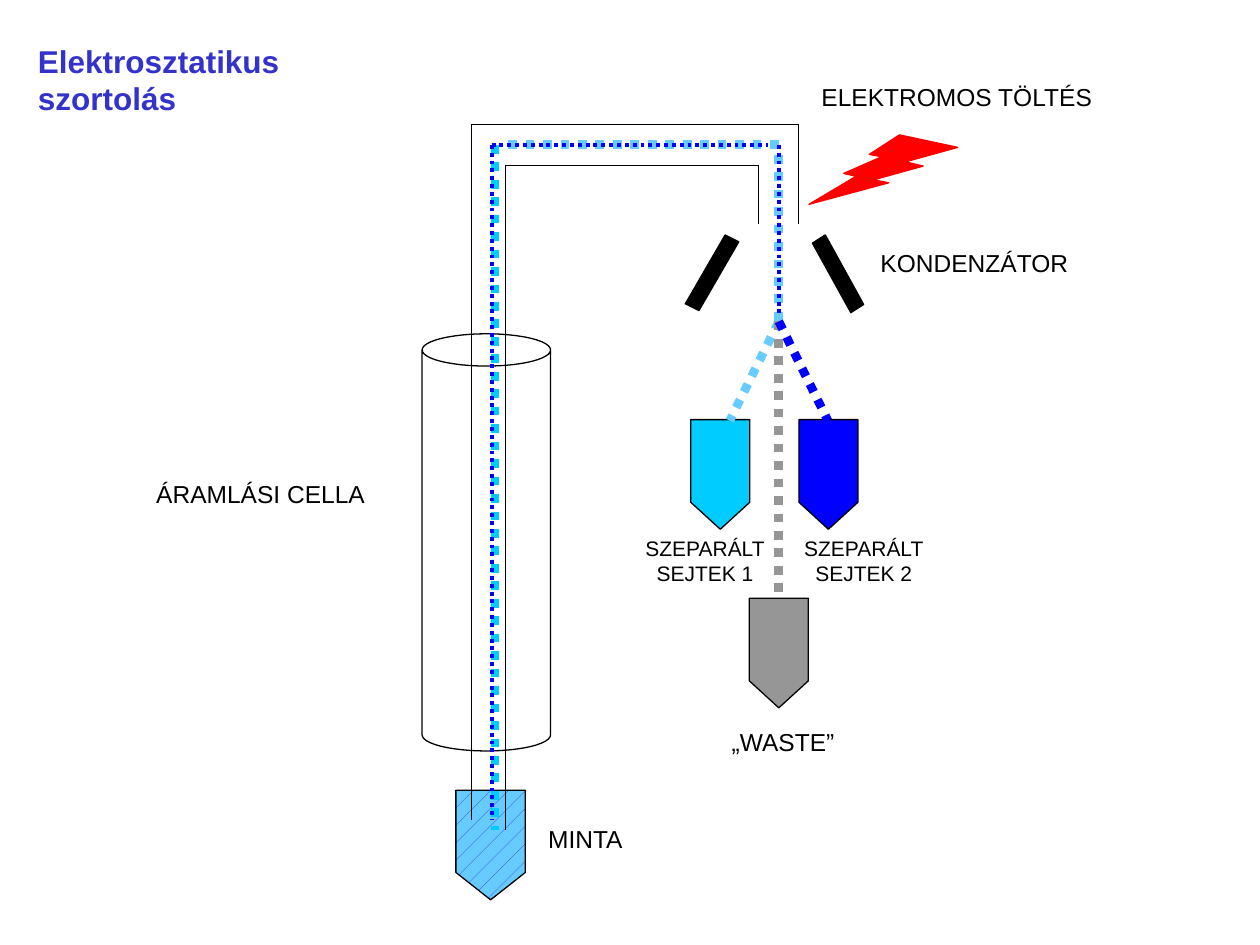
from typing import NamedTuple

from lxml.etree import SubElement
from pptx import Presentation
from pptx.dml.color import RGBColor
from pptx.enum.dml import MSO_LINE as Dash, MSO_PATTERN as Pattern
from pptx.enum.shapes import MSO_CONNECTOR as Connector, MSO_SHAPE as Preset
from pptx.enum.text import MSO_ANCHOR as Anchor, MSO_AUTO_SIZE as AutoSize, PP_ALIGN as Align
from pptx.oxml.ns import qn
from pptx.util import Cm, Pt

BLACK, GREY, RED = "000000", "969696", "FF0000"
INDIGO, BLUE, CYAN, SKY = "3333CC", "0000FF", "00CCFF", "66CCFF"

# Positions in centimetres
STREAM_X, STREAM_Y, SPLIT_Y = 15.7, 2.92, 6.48
TUBE_LEFT, TUBE_RIGHT, TUBE_TOP = 9.5, 16.1, 2.51
BORE_LEFT, BORE_RIGHT, BORE_TOP = 10.19, 15.29, 3.33
NOZZLE_Y, TUBE_END, BORE_END = 4.52, 16.54, 16.74


class Vessel(NamedTuple):
    center: float
    top: float
    color: str
    width: float = 1.19
    point: float = 0.457


class Segment(NamedTuple):
    x1: float
    y1: float
    x2: float
    y2: float
    color: str = BLACK
    weight: float = 0.75


class Plate(NamedTuple):
    left: float
    top: float
    rotation: float


class Label(NamedTuple):
    text: str
    left: float
    top: float
    width: float
    height: float = 0.84
    size: float = 14
    align: Align = Align.LEFT


SAMPLE = Vessel(9.89, 15.93, SKY, 1.4, 0.394)
COLLECTORS = [
    Vessel(14.52, 8.46, CYAN),
    Vessel(STREAM_X, 12.06, GREY),
    Vessel(16.7, 8.46, BLUE),
]
SEGMENTS = [
    # Wide cell streams
    Segment(9.98, STREAM_Y, 9.98, BORE_END, CYAN, 5),
    Segment(STREAM_X, STREAM_Y, BORE_LEFT, STREAM_Y, SKY, 5),
    Segment(STREAM_X, 3.12, STREAM_X, 6.53, SKY, 5),
    # Tube walls
    Segment(TUBE_LEFT, TUBE_TOP, TUBE_LEFT, TUBE_END),
    Segment(TUBE_LEFT, TUBE_TOP, TUBE_RIGHT, TUBE_TOP),
    Segment(TUBE_RIGHT, TUBE_TOP, TUBE_RIGHT, NOZZLE_Y),
    Segment(BORE_LEFT, BORE_TOP, BORE_LEFT, BORE_END),
    Segment(BORE_LEFT, BORE_TOP, BORE_RIGHT, BORE_TOP),
    Segment(BORE_RIGHT, BORE_TOP, BORE_RIGHT, NOZZLE_Y),
    # Sorted streams
    Segment(STREAM_X, SPLIT_Y, 14.71, 8.48, SKY, 5),
    Segment(STREAM_X, SPLIT_Y, STREAM_X, 12.09, GREY, 5),
    Segment(STREAM_X, SPLIT_Y, 16.69, 8.48, BLUE, 5),
    # Narrow cell stream
    Segment(9.91, STREAM_Y, 9.91, TUBE_END, BLUE, 2.25),
    Segment(STREAM_X, STREAM_Y, STREAM_X, 6.32, BLUE, 2.25),
    Segment(9.91, STREAM_Y, 15.49, STREAM_Y, BLUE, 2.25),
]
PLATES = [Plate(14.15, 4.7, 26.4), Plate(16.69, 4.72, 327.4)]
LABELS = [
    Label("ÁRAMLÁSI CELLA", 2.9, 9.53, 4.72),
    Label("MINTA", 10.8, 16.48, 2.06),
    Label("„WASTE”", 14.5, 14.53, 2.59),
    Label("SZEPARÁLT\nSEJTEK 1", 12.73, 10.67, 2.97, 1.27, 12, Align.CENTER),
    Label("SZEPARÁLT\nSEJTEK 2", 15.93, 10.67, 2.97, 1.27, 12, Align.CENTER),
    Label("KONDENZÁTOR", 17.5, 4.88, 4.29),
    Label("ELEKTROMOS TÖLTÉS", 16.31, 1.52, 5.99),
]


def rgb(color: str) -> RGBColor:
    return RGBColor.from_string(color)


def write_text(frame, text: str, *, size: float, color: str = BLACK,
               bold: bool = False, align: Align = Align.LEFT) -> None:
    frame.text = text
    for paragraph in frame.paragraphs:
        paragraph.alignment = align
        font = paragraph.runs[0].font
        font.name, font.size, font.bold = "Arial", Pt(size), bold
        font.color.rgb = rgb(color)


def draw_preset(slide, preset, left: float, top: float, width: float, height: float, *,
                fill: str | None = None, line: str = BLACK, rotation: float = 0,
                adjustment: float | None = None):
    shape = slide.shapes.add_shape(preset, Cm(left), Cm(top), Cm(width), Cm(height))
    shape.shadow.inherit = False
    shape.rotation = rotation
    if adjustment is not None:
        shape.adjustments[0] = adjustment
    if fill:
        shape.fill.solid()
        shape.fill.fore_color.rgb = rgb(fill)
    else:
        shape.fill.background()
    shape.line.color.rgb = rgb(line)
    shape.line.width = Pt(0.75)
    return shape


def draw_vessel(slide, vessel: Vessel):
    """Draw a pentagon turned to point down, placed by its visible top centre."""
    length = 2.21
    return draw_preset(slide, Preset.PENTAGON, vessel.center - length / 2,
                       vessel.top + (length - vessel.width) / 2, length, vessel.width,
                       fill=vessel.color, rotation=90, adjustment=vessel.point)


def draw_segment(slide, segment: Segment) -> None:
    connector = slide.shapes.add_connector(
        Connector.STRAIGHT, Cm(segment.x1), Cm(segment.y1), Cm(segment.x2), Cm(segment.y2))
    connector.line.color.rgb = rgb(segment.color)
    connector.line.width = Pt(segment.weight)
    if segment.color != BLACK:
        connector.line.dash_style = Dash.ROUND_DOT
    SubElement(connector._element.spPr, qn("a:effectLst"))


def draw_label(slide, label: Label) -> None:
    box = slide.shapes.add_textbox(
        Cm(label.left), Cm(label.top), Cm(label.width), Cm(label.height))
    box.text_frame.word_wrap = False
    box.text_frame.auto_size = AutoSize.SHAPE_TO_FIT_TEXT
    write_text(box.text_frame, label.text, size=label.size, align=label.align)


def place_title(slide, text: str) -> None:
    title = slide.shapes.title
    title.left, title.top, title.width, title.height = Cm(0.51), Cm(0.71), Cm(8.33), Cm(1.02)
    frame = title.text_frame
    frame.word_wrap = False
    frame.auto_size = AutoSize.NONE
    frame.vertical_anchor = Anchor.TOP
    write_text(frame, text, size=18, color=INDIGO, bold=True)


def main() -> None:
    presentation = Presentation()
    presentation.slide_width, presentation.slide_height = Cm(25.4), Cm(19.05)
    slide = presentation.slides.add_slide(presentation.slide_layouts[5])
    place_title(slide, "Elektrosztatikus szortolás")

    draw_preset(slide, Preset.CAN, 8.51, 6.73, 2.59, 8.41, adjustment=0.251)
    sample_fill = draw_vessel(slide, SAMPLE).fill
    sample_fill.patterned()
    sample_fill.pattern = Pattern.PERCENT_5
    sample_fill.fore_color.rgb, sample_fill.back_color.rgb = rgb(INDIGO), rgb(SKY)

    for vessel in COLLECTORS:
        draw_vessel(slide, vessel)
    for segment in SEGMENTS:
        draw_segment(slide, segment)
    for plate in PLATES:
        draw_preset(slide, Preset.PARALLELOGRAM, plate.left, plate.top, 0.41, 1.6,
                    fill=BLACK, rotation=plate.rotation, adjustment=0.25)
    bolt = draw_preset(slide, Preset.LIGHTNING_BOLT, 16.31, 2.72, 3, 1.4, fill=RED, line=RED)
    bolt._element.spPr.xfrm.set("flipH", "1")
    for label in LABELS:
        draw_label(slide, label)

    presentation.save("out.pptx")


if __name__ == "__main__":
    main()
